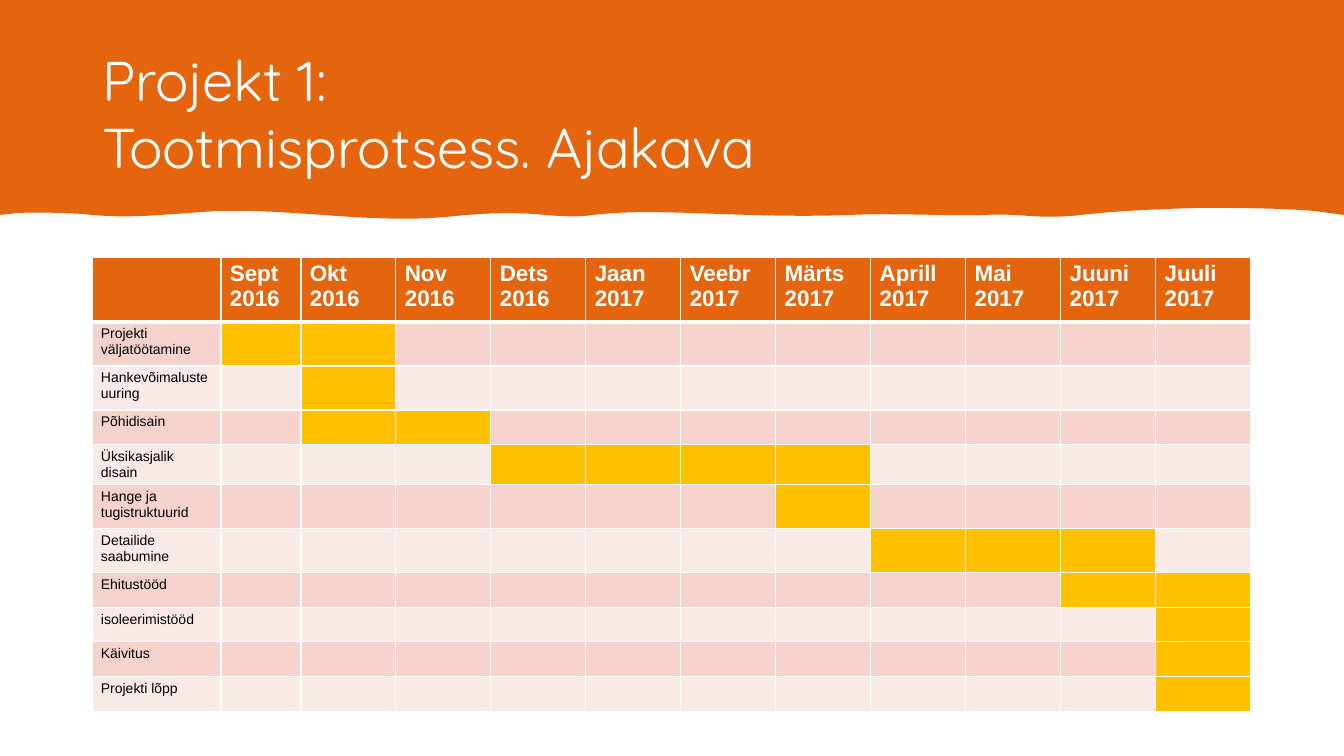
from lxml import etree
from pptx import Presentation
from pptx.dml.color import RGBColor
from pptx.enum.shapes import MSO_SHAPE
from pptx.enum.text import MSO_ANCHOR, MSO_AUTO_SIZE, PP_ALIGN
from pptx.oxml.ns import qn
from pptx.util import Pt

MIDDLE, TOP = MSO_ANCHOR.MIDDLE, MSO_ANCHOR.TOP
LEFT, NO_FIT = PP_ALIGN.LEFT, MSO_AUTO_SIZE.NONE
RECT = MSO_SHAPE.RECTANGLE

# Content
TITLE = "Projekt 1: \vTootmisprotsess. Ajakava"
MONTHS = ["Sept 2016", "Okt 2016", "Nov 2016", "Dets 2016", "Jaan 2017",
          "Veebr 2017", "Märts 2017", "Aprill 2017", "Mai 2017",
          "Juuni 2017", "Juuli 2017"]
# Task, first month, last month (counted from 1), row height
TASKS = [
    ("Projekti väljatöötamine", 1, 2, 44),
    ("Hankevõimaluste uuring", 2, 2, 44),
    ("Põhidisain", 2, 3, 35),
    ("Üksikasjalik disain", 4, 7, 40),
    ("Hange ja tugistruktuurid", 7, 7, 44),
    ("Detailide saabumine", 8, 10, 44),
    ("Ehitustööd", 10, 11, 35),
    ("isoleerimistööd", 11, 11, 34),
    ("Käivitus", 11, 11, 35),
    ("Projekti lõpp", 11, 11, 35),
]
ORANGE, GOLD, WHITE, BLACK = "E4650E", "FFC000", "FFFFFF", "000000"
BANDS = ["F5D3CC", "FAEAE7"]

# Lower edge of the title band, right to left: two controls and an end each
START = [(1344, 0), (1344, 215), (1314, 211)]
WAVES = [
    [(1276, 208), (1238, 208), (1200, 208)],
    [(1157, 209), (1114, 211), (1072, 216)],
    [(1057, 217), (1043, 217), (1029, 216)],
    [(1015, 215), (1000, 214), (985, 215)],
    [(940, 216), (895, 213), (850, 215)],
    [(797, 217), (745, 215), (692, 213)],
    [(656, 212), (621, 211), (585, 216)],
    [(572, 217), (558, 216), (545, 215)],
    [(516, 212), (486, 213), (456, 216)],
    [(421, 220), (387, 219), (352, 217)],
    [(307, 214), (263, 210), (219, 211)],
    [(199, 212), (179, 214), (159, 215)],
    [(134, 217), (108, 217), (83, 214)],
    [(61, 213), (40, 212), (18, 213)],
]
END = [(0, 215)]

# Layout in px
WIDE, HIGH = 1344, 756
SCALE = 12192000 / WIDE
COLS = [129, 80] + [95] * 10
ROWS = [65] + [task[3] for task in TASKS]


def px(n):
    return round(n * SCALE)


def rgb(code):
    return RGBColor.from_string(code)


def style(par, font, size, color, bold=False):
    par.alignment = LEFT
    par.font.name, par.font.size = font, Pt(size)
    par.font.bold, par.font.color.rgb = bold, rgb(color)


def paint(shape, color):
    shape.shadow.inherit = False
    shape.fill.solid()
    shape.fill.fore_color.rgb = rgb(color)
    shape.line.fill.background()


def bend(shape, waves, skip):
    """Turn the straight segments after the first few into curves."""
    lines = list(shape.element.iter(qn("a:lnTo")))[skip:]
    for line, wave in zip(lines, waves):
        arc = etree.Element(qn("a:cubicBezTo"))
        for x, y in wave:
            etree.SubElement(arc, qn("a:pt"), x=str(px(x)), y=str(px(y)))
        line.getparent().replace(line, arc)


def border(cell, widths):
    props = cell._tc.get_or_add_tcPr()
    for i, (side, width) in enumerate(zip("LRTB", widths)):
        line = etree.Element(qn("a:ln" + side), w=str(Pt(width)))
        fill = etree.SubElement(line, qn("a:solidFill"))
        etree.SubElement(fill, qn("a:srgbClr"), val=WHITE)
        props.insert(i, line)


deck = Presentation()
deck.slide_width, deck.slide_height = px(WIDE), px(HIGH)
slide = deck.slides.add_slide(deck.slide_layouts[5])
shapes = slide.shapes

# White ground and title band with a wavy edge
ground = shapes.add_shape(RECT, 0, 0, px(WIDE), px(HIGH))
paint(ground, WHITE)
points = START + [wave[-1] for wave in WAVES] + END
pen = shapes.build_freeform(0, 0, scale=1.0)
pen.add_line_segments([(px(x), px(y)) for x, y in points], close=True)
band = pen.convert_to_shape()
bend(band, WAVES, len(START))
paint(band, ORANGE)

# Title, in front of both
title = shapes.title
for back in (ground, band):
    title.element.addprevious(back.element)
title.left, title.top, title.width, title.height = map(px, (92, 40, 1159, 146))
frame = title.text_frame
frame.text = TITLE
frame.word_wrap, frame.auto_size = True, NO_FIT
frame.vertical_anchor = MIDDLE
style(frame.paragraphs[0], "Quicksand", 40, WHITE)

# Schedule table
table = shapes.add_table(len(ROWS), len(COLS), px(92), px(257),
                         px(sum(COLS)), px(sum(ROWS))).table
for col, width in zip(table.columns, COLS):
    col.width = px(width)
for row, height in zip(table.rows, ROWS):
    row.height = px(height)

for r in range(len(ROWS)):
    for c in range(len(COLS)):
        cell = table.cell(r, c)
        if r == 0:
            text = MONTHS[c - 1] if c else ""
            fill, look = ORANGE, (16, WHITE, True)
        else:
            task, first, last, _ = TASKS[r - 1]
            text = "" if c else task
            fill = GOLD if first <= c <= last else BANDS[(r - 1) % 2]
            look = (10, BLACK)
        cell.text = text
        style(cell.text_frame.paragraphs[0], "Arial", *look)
        cell.vertical_anchor = TOP
        cell.margin_left = cell.margin_right = px(9)
        cell.margin_top, cell.margin_bottom = px(4), 0
        cell.fill.solid()
        cell.fill.fore_color.rgb = rgb(fill)
        border(cell, (1, 1, 3 if r == 1 else 1, 3 if r == 0 else 1))

deck.save("out.pptx")
